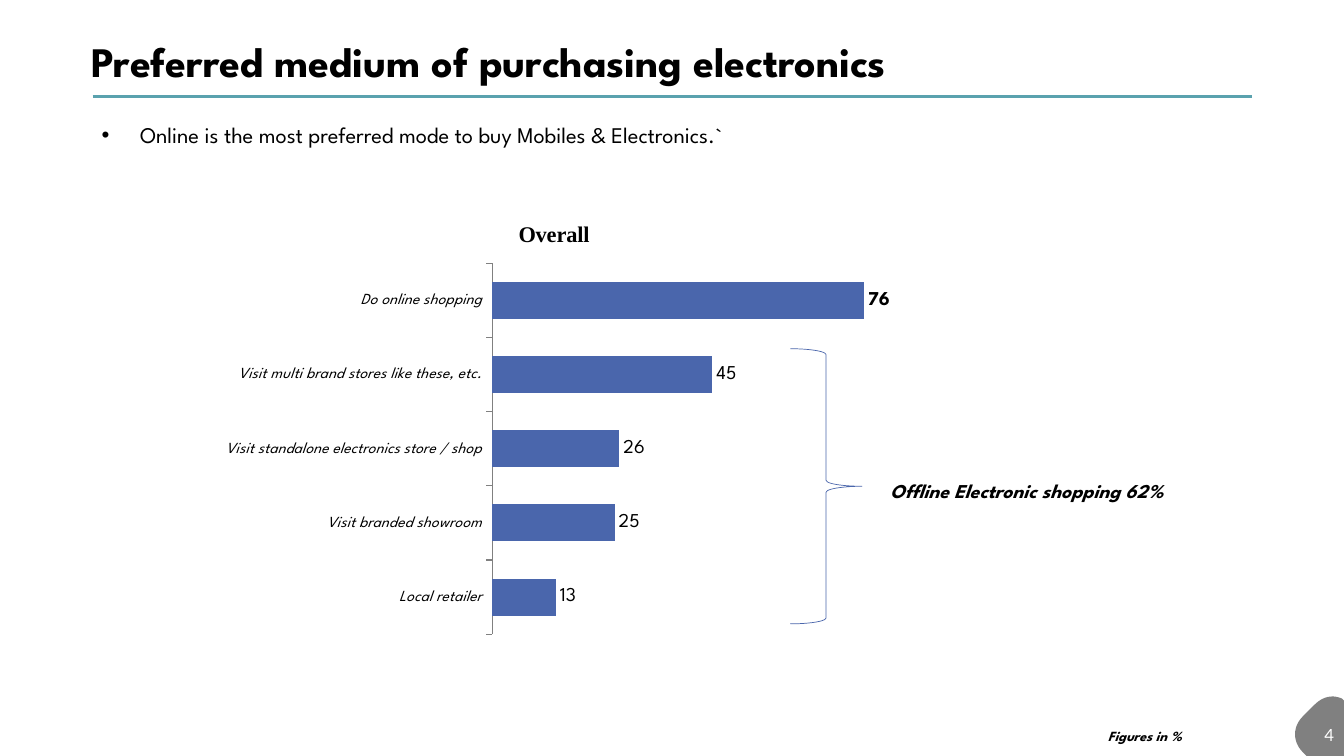
"""Build the slide on the preferred medium of purchasing electronics."""
from lxml import etree
from pptx import Presentation
from pptx.chart.data import CategoryChartData
from pptx.dml.color import RGBColor
from pptx.enum.chart import XL_CHART_TYPE, XL_LABEL_POSITION, XL_TICK_MARK
from pptx.enum.shapes import MSO_CONNECTOR, MSO_SHAPE
from pptx.enum.text import MSO_ANCHOR, PP_ALIGN
from pptx.oxml import parse_xml
from pptx.oxml.ns import nsdecls, qn
from pptx.util import Inches, Pt

BAR, OUTSIDE_END = XL_CHART_TYPE.BAR_CLUSTERED, XL_LABEL_POSITION.OUTSIDE_END
TICK_OUT, TICK_NONE = XL_TICK_MARK.OUTSIDE, XL_TICK_MARK.NONE
STRAIGHT, RIGHT_BRACE = MSO_CONNECTOR.STRAIGHT, MSO_SHAPE.RIGHT_BRACE
TOP, MIDDLE = MSO_ANCHOR.TOP, MSO_ANCHOR.MIDDLE
LEFT, RIGHT = PP_ALIGN.LEFT, PP_ALIGN.RIGHT

THEME = {
    "black": RGBColor.from_string("000000"),
    "white": RGBColor.from_string("FFFFFF"),
    "gray": RGBColor.from_string("808080"),
    "teal": RGBColor.from_string("5AA2AE"),
    "blue": RGBColor.from_string("4A66AC"),
    "main font": "League Spartan",
    "number font": "Lato",
    "chart title font": "Times New Roman",
    "title": Pt(30), "body": Pt(16), "label": Pt(14),
    "number": Pt(12), "category": Pt(11), "note": Pt(10),
}

presentation = Presentation()
presentation.slide_width, presentation.slide_height = Inches(13.33), Inches(7.5)
slide = presentation.slides.add_slide(presentation.slide_layouts[6])
column = presentation.slide_width / 100
row = presentation.slide_height / 100


def place(left, top, width, height):
    """Turn percentages of the slide into lengths."""
    return [round(length) for length in (left * column, top * row, width * column, height * row)]


def set_font(font, size, **values):
    """Apply the theme's usual text format, with any changes given."""
    font.color.rgb = values.pop("color", THEME["black"])
    for name, value in {"name": THEME["main font"], "size": THEME[size], **values}.items():
        setattr(font, name, value)


badge_start = (99.17, 92.13)
badge_sides = [
    [(99.4, 92.13), (99.65, 92.27), (99.85, 92.4)],
    [(100, 92.67)], [(100, 100.13)], [(97.3, 100.13)], [(96.92, 99.47)],
    [(96.17, 98.13), (96.17, 96.13), (96.92, 94.8)],
    [(97.82, 93.2)],
    [(98.2, 92.53), (98.65, 92.13), badge_start],
]
badge_points = [badge_start]
for side in badge_sides:
    if len(side) == 1:
        badge_points += side
        continue
    curve = [badge_points[-1], *side]
    for step in range(1, 13):
        t = step / 12
        weights = ((1 - t) ** 3, 3 * t * (1 - t) ** 2, 3 * t * t * (1 - t), t ** 3)
        badge_points.append(tuple(sum(w * point[axis] for w, point in zip(weights, curve))
                                  for axis in (0, 1)))
builder = slide.shapes.build_freeform(*place(*badge_start, 0, 0)[:2])
builder.add_line_segments([place(*point, 0, 0)[:2] for point in badge_points[1:]], close=True)
badge = builder.convert_to_shape()
badge.shadow.inherit = False
badge.fill.solid()
badge.fill.fore_color.rgb = THEME["gray"]
badge.line.fill.background()

title_rule = slide.shapes.add_connector(
    STRAIGHT, *place(6.9, 12.8, 0, 0)[:2], *place(93.17, 12.8, 0, 0)[:2])
title_rule.line.color.rgb = THEME["teal"]
title_rule.line.width = Pt(2)
etree.SubElement(title_rule._element.spPr, qn("a:effectLst"))

chart_data = CategoryChartData()
chart_data.categories = [
    "Do online shopping", "Visit multi brand stores like these, etc.",
    "Visit standalone electronics store / shop", "Visit branded showroom", "Local retailer",
]
chart_data.add_series("Overall", (76, 45, 26, 25, 13))
chart = slide.shapes.add_chart(BAR, *place(15.68, 26.67, 51.1, 58.4), chart_data).chart
set_font(chart.font, "label", name=THEME["number font"])
chart.has_legend = False
chart.has_title = True
chart.chart_title.include_in_layout = False
chart_title = chart.chart_title.text_frame.paragraphs[0].add_run()
chart_title.text = "Overall"
set_font(chart_title.font, "body", name=THEME["chart title font"], bold=True)

category_axis = chart.category_axis
category_axis.reverse_order = True
category_axis.major_tick_mark, category_axis.minor_tick_mark = TICK_OUT, TICK_NONE
category_axis.format.line.color.rgb = THEME["gray"]
category_axis.format.line.width = Pt(0.75)
set_font(category_axis.tick_labels.font, "category", italic=True)
value_axis = chart.value_axis
value_axis.minimum_scale, value_axis.maximum_scale = 0, 80
value_axis.has_major_gridlines = False
value_axis.visible = False

plot = chart.plots[0]
plot.gap_width = 100
plot.vary_by_categories = False
series = plot.series[0]
series.format.fill.solid()
series.format.fill.fore_color.rgb = THEME["blue"]
labels = series.data_labels
labels.show_value = True
labels.position = OUTSIDE_END
set_font(labels.font, "label", bold=False)
online_label = series.points[0].data_label
set_font(online_label.font, "label", bold=True)
online_label.position = OUTSIDE_END

plot_area = chart._chartSpace.chart.plotArea
for old_layout in plot_area.findall(qn("c:layout")):
    plot_area.remove(old_layout)
plot_frame = {"x": 0.41, "y": 0.14, "w": 0.57, "h": 0.84}
plot_area.insert(0, parse_xml(
    f'<c:layout {nsdecls("c")}><c:manualLayout><c:layoutTarget val="inner"/>'
    '<c:xMode val="edge"/><c:yMode val="edge"/>'
    + "".join(f'<c:{name} val="{share}"/>' for name, share in plot_frame.items())
    + "</c:manualLayout></c:layout>"))

brace = slide.shapes.add_shape(RIGHT_BRACE, *place(58.8, 46.13, 5.33, 36.4))
brace.shadow.inherit = False
brace.fill.background()
brace.line.color.rgb = THEME["blue"]
brace.line.width = Pt(0.5)

emphasis = {"bold": True, "italic": True}
texts = [
    ("4", (77.5, 94.53, 22.5, 5.33), MIDDLE, "number",
     {"name": THEME["number font"], "color": THEME["white"]}, {"alignment": RIGHT}),
    ("Online is the most preferred mode to buy Mobiles & Electronics.`",
     (6.83, 15.2, 87.8, 4.93), MIDDLE, "body", {}, {"line_spacing": 1.07, "space_after": Pt(8)}),
    ("Preferred medium of purchasing electronics", (6.08, 3.87, 87, 9.07), MIDDLE, "title",
     {"bold": True}, {"line_spacing": 0.9}),
    ("Offline Electronic shopping 62%", (65.5, 62.67, 27.6, 4.53), TOP, "label", emphasis, {}),
    ("Figures in %", (81.7, 95.6, 7.65, 3.6), TOP, "note", emphasis, {}),
]
for text, frame, anchor, size, font_values, paragraph_values in texts:
    text_frame = slide.shapes.add_textbox(*place(*frame)).text_frame
    text_frame.word_wrap = True
    text_frame.vertical_anchor = anchor
    paragraph = text_frame.paragraphs[0]
    for name, value in {"alignment": LEFT, **paragraph_values}.items():
        setattr(paragraph, name, value)
    if size == "body":
        properties = paragraph._p.get_or_add_pPr()
        properties.set("marL", str(Inches(0.38)))
        properties.set("indent", str(-Inches(0.38)))
        etree.SubElement(properties, qn("a:buFont"), typeface="Arial")
        etree.SubElement(properties, qn("a:buChar"), char="•")
    run = paragraph.add_run()
    run.text = text
    set_font(run.font, size, **font_values)

presentation.save("out.pptx")
